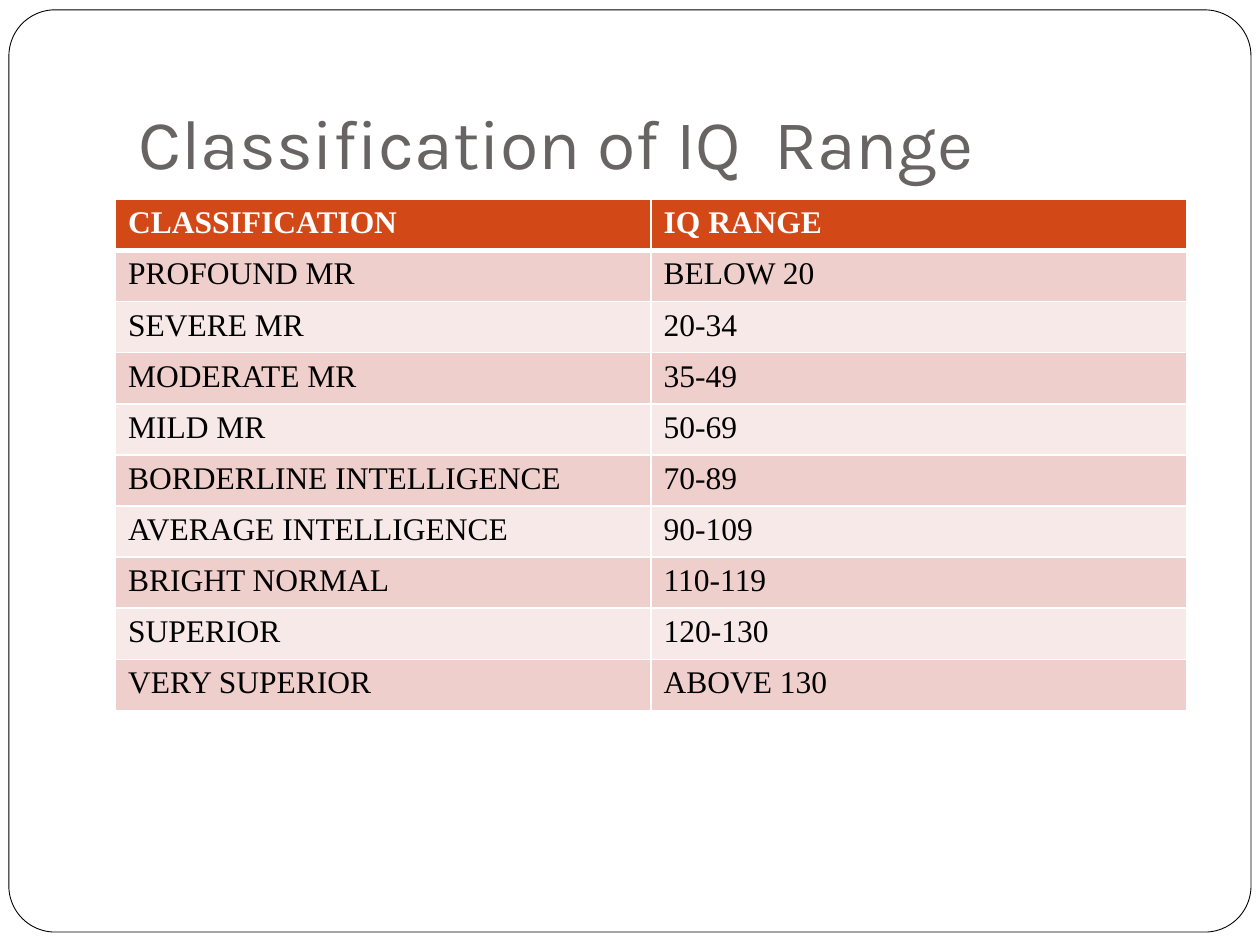
from dataclasses import dataclass

from lxml.etree import SubElement
from pptx import Presentation
from pptx.dml.color import RGBColor
from pptx.enum.shapes import MSO_SHAPE as Preset
from pptx.enum.text import MSO_ANCHOR as Anchor, PP_ALIGN as Align
from pptx.oxml.ns import qn
from pptx.util import Cm, Pt

COLORS = {
    "white": "FFFFFF",
    "black": "000000",
    "title": "696464",
    "header": "D34817",
    "band_dark": "EFCFCC",
    "band_light": "F7E9E8",
}


@dataclass
class Level:
    classification: str
    iq_range: str


HEADER = Level("CLASSIFICATION", "IQ RANGE")
LEVELS = [
    Level("PROFOUND MR", "BELOW 20"),
    Level("SEVERE MR", "20-34"),
    Level("MODERATE MR", "35-49"),
    Level("MILD MR", "50-69"),
    Level("BORDERLINE INTELLIGENCE", "70-89"),
    Level("AVERAGE INTELLIGENCE", "90-109"),
    Level("BRIGHT NORMAL", "110-119"),
    Level("SUPERIOR", "120-130"),
    Level("VERY SUPERIOR", "ABOVE 130"),
]


def rgb(name: str) -> RGBColor:
    return RGBColor.from_string(COLORS[name])


def style_text(text_frame, font: str, size: float, color: str, bold: bool = False) -> None:
    for paragraph in text_frame.paragraphs:
        paragraph.alignment = Align.LEFT
        for run in paragraph.runs:
            run.font.name = font
            run.font.size = Pt(size)
            run.font.bold = bold
            run.font.color.rgb = rgb(color)


def set_borders(cell, top: float = 1, bottom: float = 1) -> None:
    """White borders; they must precede the fill in the cell properties."""
    properties = cell._tc.get_or_add_tcPr()
    for side, width in {"L": 1, "R": 1, "T": top, "B": bottom}.items():
        border = SubElement(properties, qn(f"a:ln{side}"), w=str(Pt(width)))
        solid = SubElement(border, qn("a:solidFill"))
        SubElement(solid, qn("a:srgbClr"), val=COLORS["white"])


def fill_row(table, index: int, level: Level) -> None:
    is_header = index == 0
    band = "header" if is_header else "band_dark" if index % 2 else "band_light"
    for column, text in enumerate((level.classification, level.iq_range)):
        cell = table.cell(index, column)
        set_borders(cell, top=3 if index == 1 else 1, bottom=3 if is_header else 1)
        cell.fill.solid()
        cell.fill.fore_color.rgb = rgb(band)
        cell.text_frame.text = text
        style_text(cell.text_frame, "Times New Roman", 18,
                   "white" if is_header else "black", bold=is_header)


def add_frame(slide) -> None:
    frame = slide.shapes.add_shape(
        Preset.ROUNDED_RECTANGLE, Cm(0.18), Cm(0.2), Cm(25.04), Cm(18.59))
    frame.adjustments[0] = 0.05
    frame.shadow.inherit = False
    frame.fill.solid()
    frame.fill.fore_color.rgb = rgb("white")
    frame.line.color.rgb = rgb("black")
    frame.line.width = Pt(0.5)
    # Send behind the title
    slide.shapes._spTree.insert(2, frame._element)


def add_title(slide, text: str) -> None:
    title = slide.shapes.title
    title.left, title.top, title.width, title.height = Cm(2.54), Cm(0.76), Cm(21.59), Cm(3.18)
    text_frame = title.text_frame
    text_frame.text = text
    text_frame.word_wrap = True
    text_frame.vertical_anchor = Anchor.BOTTOM
    text_frame.margin_bottom = Cm(0.25)
    style_text(text_frame, "Karla", 40, "title")


def add_levels_table(slide) -> None:
    rows = [HEADER, *LEVELS]
    table = slide.shapes.add_table(
        len(rows), 2, Cm(2.33), Cm(4.02), Cm(21.59), Cm(1.03) * len(rows)).table
    for index, level in enumerate(rows):
        fill_row(table, index, level)


def main() -> None:
    presentation = Presentation()
    presentation.slide_width, presentation.slide_height = Cm(25.4), Cm(19.05)
    slide = presentation.slides.add_slide(presentation.slide_layouts[5])
    add_frame(slide)
    add_title(slide, "Classification of IQ  Range")
    add_levels_table(slide)
    presentation.save("out.pptx")


if __name__ == "__main__":
    main()
